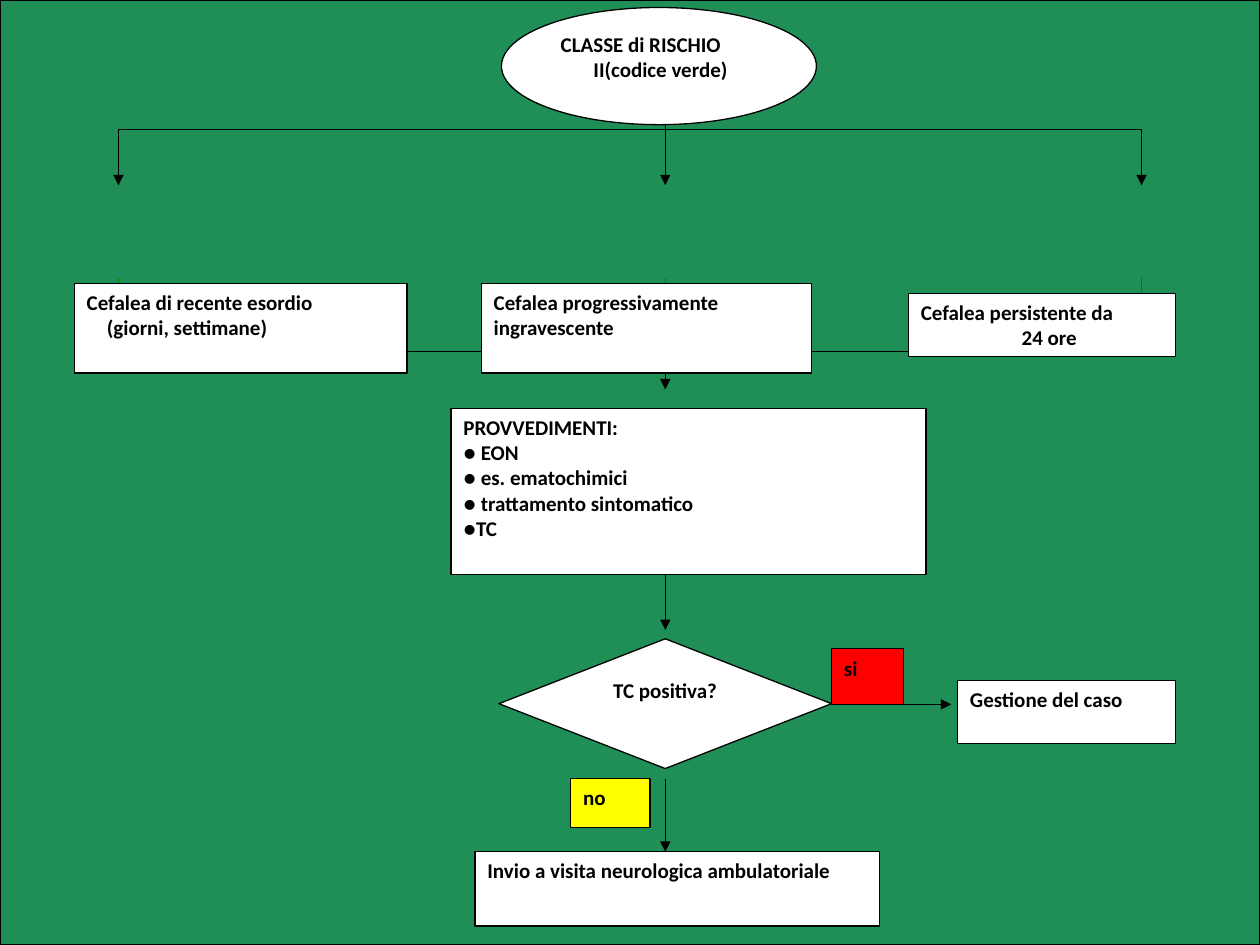
import pptx
import pptx.dml.color
import pptx.enum.shapes
import pptx.enum.text
import pptx.oxml
import pptx.oxml.ns
import pptx.util

COLORS = {
    "field": "008040",
    "box": "FFFFFF",
    "ink": "000000",
    "stem": "008000",
    "yes": "FF0000",
    "no": "FFFF00",
}
SHAPES = pptx.enum.shapes.MSO_SHAPE
ALIGN = pptx.enum.text.PP_ALIGN


class FlowSlide:
    columns, rows = 100, 75
    font, size, weight = "Calibri", 12, 0.75

    def __init__(self, deck):
        self.deck = deck
        self.slide = deck.slides.add_slide(deck.slide_layouts[5])

    def x(self, column):
        return round(self.deck.slide_width * column / self.columns)

    def y(self, row):
        return round(self.deck.slide_height * row / self.rows)

    def color(self, name):
        return pptx.dml.color.RGBColor.from_string(COLORS[name])

    def subelement(self, parent, tag, **attributes):
        child = pptx.oxml.parse_xml(f"<a:{tag} {pptx.oxml.ns.nsdecls('a')}/>")
        for key, value in attributes.items():
            child.set(key, value)
        parent.append(child)

    def label(self, frame, lines, align=ALIGN.LEFT, indents=()):
        frame.word_wrap = True
        frame.auto_size = pptx.enum.text.MSO_AUTO_SIZE.NONE
        frame.vertical_anchor = pptx.enum.text.MSO_ANCHOR.TOP
        for number, line in enumerate(lines):
            paragraph = frame.add_paragraph() if number else frame.paragraphs[0]
            paragraph.alignment = align
            if number < len(indents):
                margin = paragraph._p.get_or_add_pPr()
                margin.set("marL", str(self.x(indents[number])))
                margin.set("indent", "0")
            run = paragraph.add_run()
            run.text = line
            run.font.name = self.font
            run.font.size = pptx.util.Pt(self.size)
            run.font.bold = True
            run.font.color.rgb = self.color("ink")

    def shape(self, area, lines=(), kind=SHAPES.RECTANGLE, fill="box", alpha=None, **style):
        left, top, width, height = area
        shape = self.slide.shapes.add_shape(
            kind, self.x(left), self.y(top), self.x(width), self.y(height))
        shape.shadow.inherit = False
        shape.fill.solid()
        shape.fill.fore_color.rgb = self.color(fill)
        if alpha:
            tint = shape._element.spPr.find(".//" + pptx.oxml.ns.qn("a:srgbClr"))
            self.subelement(tint, "alpha", val=str(alpha * 1000))
        shape.line.color.rgb = self.color("ink")
        shape.line.width = pptx.util.Pt(self.weight)
        self.label(shape.text_frame, lines, **style)

    def title(self, area, lines, **style):
        heading = self.slide.shapes.title
        left, top, width, height = area
        heading.left, heading.top = self.x(left), self.y(top)
        heading.width, heading.height = self.x(width), self.y(height)
        self.label(heading.text_frame, lines, **style)
        self.slide.shapes._spTree.append(heading._element)

    def line(self, start, end, color="ink", arrow=False):
        line = self.slide.shapes.add_connector(
            pptx.enum.shapes.MSO_CONNECTOR.STRAIGHT,
            self.x(start[0]), self.y(start[1]), self.x(end[0]), self.y(end[1]))
        line.line.color.rgb = self.color(color)
        line.line.width = pptx.util.Pt(self.weight)
        if arrow:
            self.subelement(line.line._get_or_add_ln(), "tailEnd", type="triangle")
        self.subelement(line._element.spPr, "effectLst")


def main():
    deck = pptx.Presentation()
    deck.slide_width = pptx.util.Inches(10)
    deck.slide_height = pptx.util.Inches(7.5)
    flow = FlowSlide(deck)

    left, trunk, right = 9.4, 52.8, 90.6
    split, join = 10.3, 27.9

    flow.shape((0, 0, 100, 75), fill="field", alpha=88)
    for level in (split, join):
        flow.line((left, level), (right, level))
    for branch in (left, trunk, right):
        flow.line((branch, split), (branch, 14.7), arrow=True)
        flow.line((branch, 22.1), (branch, join), color="stem")
    flow.line((trunk, 7.4), (trunk, split))
    for top, bottom in ((join, 30.9), (45.6, 50), (61.8, 67.6)):
        flow.line((trunk, top), (trunk, bottom), arrow=True)

    flow.shape((35.8, 32.4, 37.7, 13.2),
               ["PROVVEDIMENTI:", "● EON", "● es. ematochimici",
                "● trattamento sintomatico", "●TC"])
    flow.shape((39.6, 50.7, 26.4, 10.3), ["TC positiva?"],
               kind=SHAPES.DIAMOND, align=ALIGN.CENTER)
    flow.shape((66, 51.5, 5.7, 4.4), ["si"], fill="yes")
    flow.shape((45.3, 61.8, 6.3, 3.9), ["no"], fill="no")
    flow.shape((37.7, 67.6, 32.1, 5.9),
               ["Invio a visita neurologica ambulatoriale"], align=ALIGN.JUSTIFY)
    flow.line((66, 55.9), (75.5, 55.9), arrow=True)

    flow.shape((39.8, 0.6, 25, 9.3), kind=SHAPES.OVAL)
    flow.title((43.5, 2, 17.6, 6.5), ["CLASSE di RISCHIO", "II(codice verde)"],
               indents=(0, 2.6))
    flow.shape((5.9, 22.5, 26.4, 7.1),
               ["Cefalea di recente esordio", "(giorni, settimane)"], indents=(0, 1.6))
    flow.shape((38.2, 22.5, 26.2, 7.1), ["Cefalea progressivamente ingravescente"])
    flow.shape((72.1, 23.3, 21.2, 5), ["Cefalea persistente da", "24 ore"], indents=(0, 8))
    flow.shape((76, 54, 17.3, 5), ["Gestione del caso"], align=ALIGN.JUSTIFY)

    deck.save("out.pptx")


if __name__ == "__main__":
    main()
